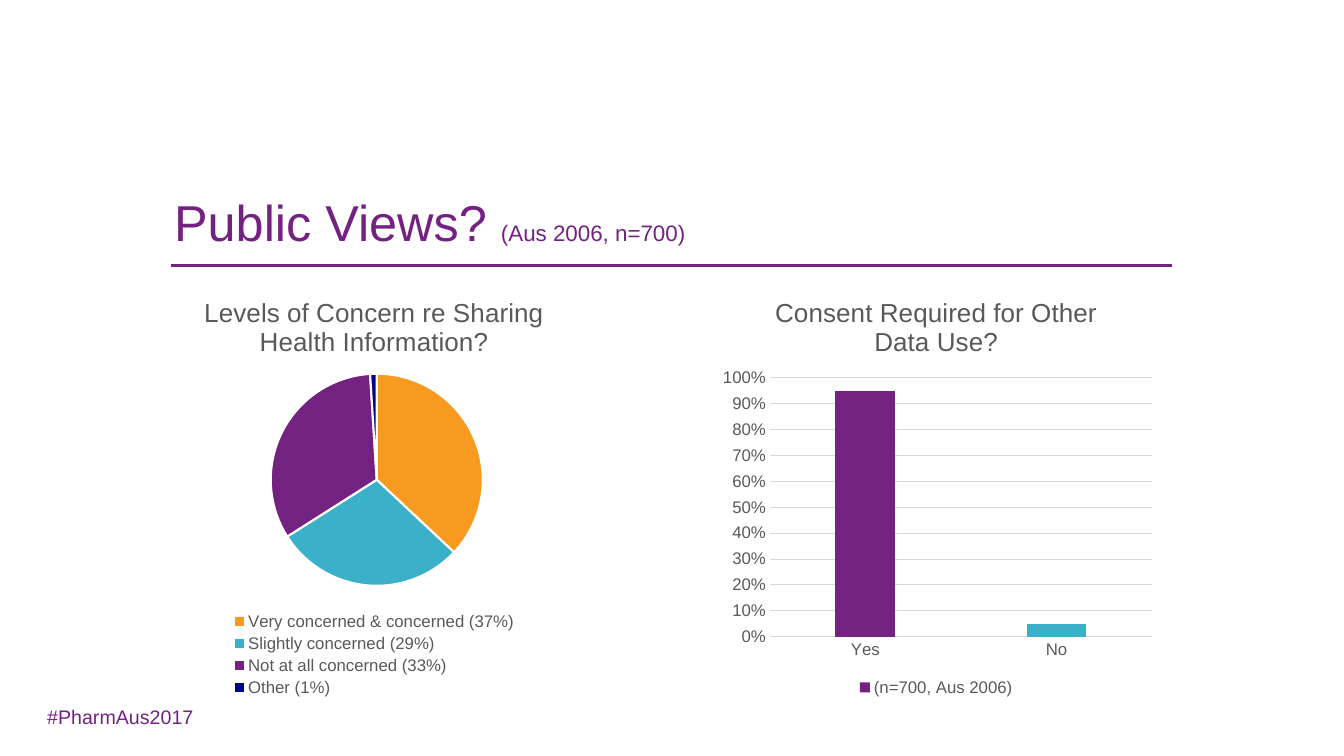
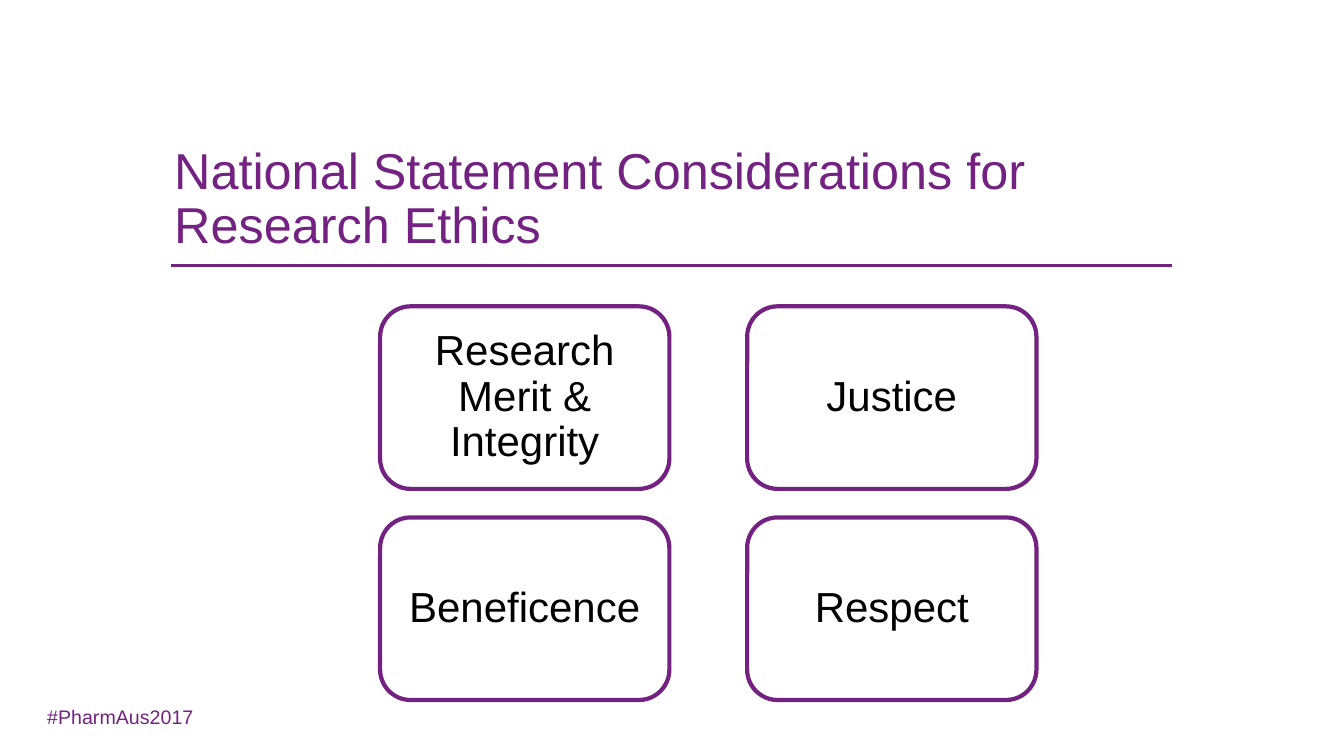
"""Build two slides on public views and research ethics."""
from pptx import Presentation
from pptx import util as u
from pptx.chart import data as chart_data
from pptx.dml import color
from pptx.enum import chart as charts, shapes, text
from pptx.oxml import parse_xml
from pptx.oxml import ns

COLOURS = {
    "purple": "732282", "orange": "F79A20", "teal": "3BB0C9", "navy": "000388",
    "black": "000000", "white": "FFFFFF", "grey": "595959", "rule": "D9D9D9",
}
FONT = "Arial"


def rgb(name):
    return color.RGBColor.from_string(COLOURS[name])


def set_font(font, size, colour):
    font.name, font.size, font.color.rgb = FONT, u.Pt(size), rgb(colour)
    font.bold = False


def set_fill(fill, colour):
    fill.solid()
    fill.fore_color.rgb = rgb(colour)


def set_line(line, colour, width):
    line.color.rgb = rgb(colour)
    line.width = u.Pt(width)


class Deck:
    def __init__(self):
        self.presentation = Presentation()
        self.presentation.slide_width = u.Cm(33.87)
        self.presentation.slide_height = u.Cm(19.05)
        self.slide = None

    def add_slide(self, title_runs, title_top):
        layout = self.presentation.slide_layouts[6]
        self.slide = self.presentation.slides.add_slide(layout)
        self.add_rule(4.32, 29.54, 6.68)
        title = self.add_text((4.14, title_top, 27.41, 3.68), title_runs)
        title.vertical_anchor = text.MSO_ANCHOR.MIDDLE
        title.paragraphs[0].line_spacing = 0.9
        self.add_text((0.94, 17.65, 4.34, 0.86), [("#PharmAus2017", 14)])

    def add_rule(self, left, right, top):
        rule = self.slide.shapes.add_connector(
            shapes.MSO_CONNECTOR.STRAIGHT, u.Cm(left), u.Cm(top), u.Cm(right), u.Cm(top))
        set_line(rule.line, "purple", 2)
        rule._element.spPr.append(parse_xml("<a:effectLst %s/>" % ns.nsdecls("a")))

    def add_text(self, box, runs):
        frame = self.slide.shapes.add_textbox(*map(u.Cm, box)).text_frame
        frame.word_wrap = True
        self.add_runs(frame.paragraphs[0], runs, "purple")
        return frame

    def add_runs(self, paragraph, runs, colour):
        for words, size in runs:
            run = paragraph.add_run()
            run.text = words
            set_font(run.font, size, colour)

    def add_card(self, box, words):
        shape = self.slide.shapes.add_shape(
            shapes.MSO_SHAPE.FLOWCHART_ALTERNATE_PROCESS, *map(u.Cm, box))
        shape.shadow.inherit = False
        set_fill(shape.fill, "white")
        set_line(shape.line, "purple", 3)
        frame = shape.text_frame
        frame.word_wrap = True
        frame.vertical_anchor = text.MSO_ANCHOR.MIDDLE
        frame.margin_left = frame.margin_right = u.Cm(0.3)
        frame.margin_top = frame.margin_bottom = u.Cm(0.3)
        paragraph = frame.paragraphs[0]
        paragraph.alignment = text.PP_ALIGN.CENTER
        paragraph.line_spacing = 0.9
        self.add_runs(paragraph, [(words, 30)], "black")

    def add_chart(self, kind, box, title, series, values, plot_box, number_format="General"):
        data = chart_data.CategoryChartData(number_format=number_format)
        data.categories = list(values)
        data.add_series(series, list(values.values()))
        chart = self.slide.shapes.add_chart(kind, *map(u.Cm, box), data).chart
        set_font(chart.font, 12, "grey")
        chart.has_title = True
        self.add_runs(chart.chart_title.text_frame.paragraphs[0], [(title, 18.6)], "grey")
        chart.has_legend = True
        chart.legend.position = charts.XL_LEGEND_POSITION.BOTTOM
        chart.legend.include_in_layout = False
        set_font(chart.legend.font, 12, "grey")
        self.place_plot(chart, plot_box)
        return chart

    def place_plot(self, chart, plot_box):
        area = chart._chartSpace.chart.plotArea
        for layout in area.findall(ns.qn("c:layout")):
            area.remove(layout)
        sizes = "".join('<c:%s val="%s"/>' % pair for pair in zip("xywh", plot_box))
        area.insert(0, parse_xml(
            '<c:layout %s><c:manualLayout><c:layoutTarget val="inner"/>'
            '<c:xMode val="edge"/><c:yMode val="edge"/>%s'
            '</c:manualLayout></c:layout>' % (ns.nsdecls("c"), sizes)))

    def add_pie(self, box, title, series, values, colours):
        chart = self.add_chart(charts.XL_CHART_TYPE.PIE, box, title, series, values,
                               (0.3, 0.23, 0.41, 0.5))
        for index, colour in enumerate(colours):
            point = chart.plots[0].series[0].points[index]
            set_fill(point.format.fill, colour)
            set_line(point.format.line, "white", 1.5)

    def add_columns(self, box, title, series, values):
        chart = self.add_chart(charts.XL_CHART_TYPE.COLUMN_CLUSTERED, box, title, series,
                               values, (0.13, 0.24, 0.85, 0.61), "0%")
        plot = chart.plots[0]
        plot.vary_by_categories = False
        plot.gap_width, plot.overlap = 219, -27
        set_fill(plot.series[0].format.fill, "purple")
        set_fill(plot.series[0].points[1].format.fill, "teal")
        for axis in (chart.category_axis, chart.value_axis):
            axis.major_tick_mark = axis.minor_tick_mark = charts.XL_TICK_MARK.NONE
            set_font(axis.tick_labels.font, 12, "grey")
        set_line(chart.category_axis.format.line, "rule", 0.75)
        scale = chart.value_axis
        scale.minimum_scale, scale.maximum_scale, scale.major_unit = 0, 1, 0.1
        scale.tick_labels.number_format = "0%"
        scale.tick_labels.number_format_is_linked = False
        scale.format.line.fill.background()
        set_line(scale.major_gridlines.format.line, "rule", 0.75)


def main():
    deck = Deck()

    deck.add_slide([("Public Views? ", 36), ("(Aus 2006, n=700)", 16)], 3.84)
    concern = {
        "Very concerned & concerned (37%)": 37,
        "Slightly concerned (29%)": 29,
        "Not at all concerned (33%)": 33,
        "Other (1%)": 1,
    }
    deck.add_pie((2.79, 6.96, 13.28, 10.69),
                 "Levels of Concern re Sharing Health Information?",
                 "Series 1", concern, ("orange", "teal", "purple", "navy"))
    deck.add_columns((17.93, 6.96, 11.33, 10.69),
                     "Consent Required for Other Data Use?",
                     "(n=700, Aus 2006)", {"Yes": 0.95, "No": 0.05})

    deck.add_slide([("National Statement Considerations for Research Ethics", 36)], 3.2)
    principles = ("Research Merit & Integrity", "Justice", "Beneficence", "Respect")
    for index, principle in enumerate(principles):
        row, column = divmod(index, 2)
        deck.add_card((9.58 + 9.25 * column, 7.72 + 5.32 * row, 7.29, 4.6), principle)

    deck.presentation.save("out.pptx")


if __name__ == "__main__":
    main()
